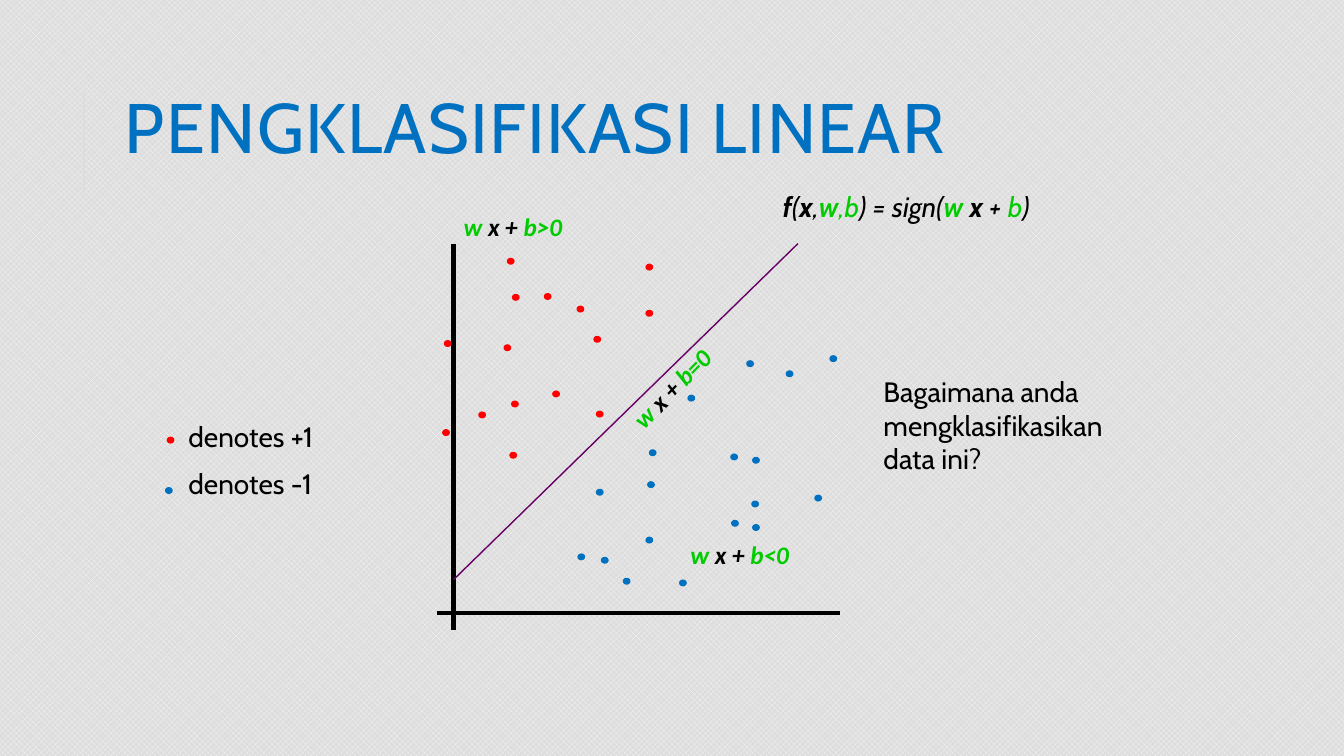
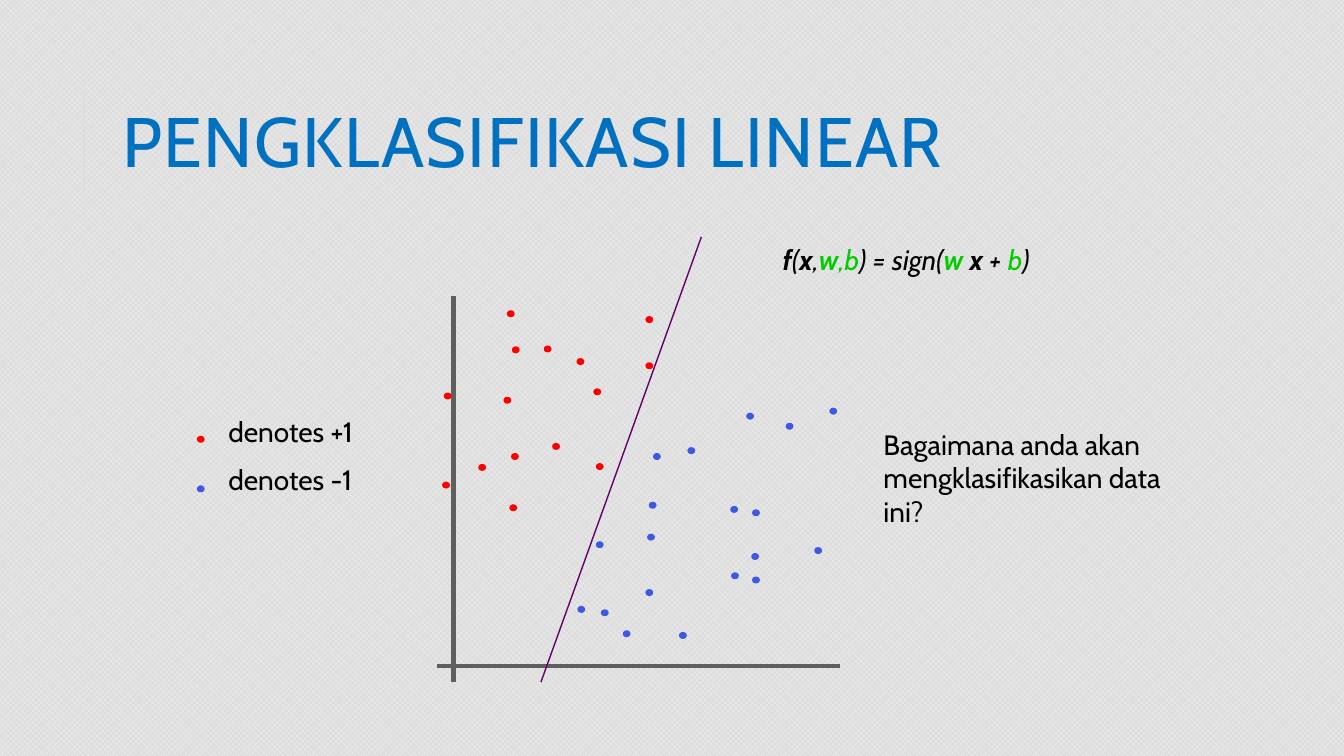
from dataclasses import dataclass

from lxml import etree
from pptx import Presentation
from pptx.dml.color import RGBColor
from pptx.enum.dml import MSO_PATTERN
from pptx.enum.shapes import MSO_CONNECTOR, MSO_SHAPE
from pptx.enum.text import MSO_ANCHOR, MSO_AUTO_SIZE
from pptx.oxml.ns import qn
from pptx.util import Inches, Pt

OVAL = MSO_SHAPE.OVAL
LINE = MSO_CONNECTOR.STRAIGHT
MIDDLE, TOP = MSO_ANCHOR.MIDDLE, MSO_ANCHOR.TOP
GROW, FIXED = MSO_AUTO_SIZE.SHAPE_TO_FIT_TEXT, MSO_AUTO_SIZE.NONE
WEAVE = MSO_PATTERN.SOLID_DIAMOND

# Grid: 160 columns by 90 rows, twelve cells to the inch
COLS, ROWS = 160, 90
BLACK, GREEN, RED, BLUE = "000000", "00CC00", "FF0000", "0070C0"
INDIGO, GREY, PURPLE = "3E59E1", "5F5F5F", "660066"
PALE, MIST = "F8F8F8", "DDDDDD"
BODY, MATH = "Cabin", "Calibri"
DOT = (0.8, 0.7)

Spot = tuple[float, float]
Area = tuple[float, float, float, float]


@dataclass
class Bit:
    text: str
    hue: str = BLACK
    bold: bool = False


@dataclass
class Style:
    size: float = 20
    face: str = BODY
    hue: str = BLACK
    italic: bool = False
    wrap: bool = True
    anchor: MSO_ANCHOR = TOP
    fit: MSO_AUTO_SIZE = GROW
    tight: float | None = None
    track: int = 0


@dataclass
class Label:
    area: Area
    sign: str
    turn: float = 0


@dataclass
class Scene:
    title: Spot
    drop: float
    axis: str
    minus: str
    legend: Spot
    keys: tuple[Spot, Spot]
    split: tuple[Spot, Spot]
    ask: str
    width: float
    extra: tuple[Spot, ...] = ()
    labels: tuple[Label, ...] = ()


PLAIN = Style()
HEAD = Style(50, hue=BLUE, anchor=MIDDLE, fit=FIXED, tight=0.8, track=100)
RULE = Style(italic=True)
NOTE = Style(18, MATH, italic=True, wrap=False, anchor=MIDDLE, fit=FIXED)

FORMULA = [
    Bit("f", bold=True), Bit("("), Bit("x", bold=True), Bit(","),
    Bit("w", GREEN, True), Bit(",b", GREEN), Bit(") = sign("),
    Bit("w ", GREEN, True), Bit("x", bold=True), Bit(" + "),
    Bit("b", GREEN), Bit(")"),
]

# Centres of the data points
PLUS = (
    (53.1, 51.5), (77.3, 37.3), (65.2, 35.3), (71.4, 49.3), (60.4, 41.4),
    (61.4, 35.4), (61.3, 48.1), (71.1, 40.4), (61.1, 54.2), (77.3, 31.8),
    (60.8, 31.1), (66.2, 46.9), (57.4, 49.4), (69.1, 36.8), (53.3, 40.9),
)
MINUS = (
    (69.2, 66.3), (87.4, 54.4), (71.4, 58.6), (99.2, 42.7), (89.9, 60),
    (82.3, 47.4), (97.4, 59.3), (74.6, 69.2), (90, 54.8), (77.7, 53.9),
    (94, 44.5), (89.3, 43.3), (87.5, 62.3), (81.3, 69.4), (77.3, 64.3),
    (77.5, 57.7), (72, 66.7), (90, 62.8),
)

SCENES = (
    Scene(
        title=(13.7, 6), drop=0, axis=BLACK, minus=BLUE,
        legend=(21.25, 49.3), keys=((20.3, 52.4), (20.1, 58.4)),
        split=((54, 69), (95, 29)),
        ask="Bagaimana anda mengklasifikasikan data ini?", width=32.3,
        labels=(
            Label((72.6, 44.5, 16.1, 2), "=", 314.4),
            Label((81, 64, 32, 4), "<"),
            Label((54, 25, 32, 4), ">"),
        ),
    ),
    Scene(
        title=(13.4, 7.7), drop=6.25, axis=GREY, minus=INDIGO,
        legend=(26, 48.8), keys=((23.9, 52.3), (23.9, 58.2)),
        split=((64.4, 81.2), (83.5, 28.2)),
        ask="Bagaimana anda akan mengklasifikasikan data ini?", width=35.4,
        extra=((78.2, 48.1),),
    ),
)


def cell(count: float) -> int:
    return Inches(count / 12)


def paint(color, hue: str) -> None:
    color.rgb = RGBColor.from_string(hue)


def stroke(slide, start: Spot, end: Spot, hue: str, width: float) -> None:
    line = slide.shapes.add_connector(LINE, *map(cell, start + end))
    paint(line.line.color, hue)
    line.line.width = Pt(width)
    etree.SubElement(line._element.spPr, qn("a:effectLst"))


def dot(slide, spot: Spot, hue: str) -> None:
    x, y = spot
    w, h = DOT
    area = (x - w / 2, y - h / 2, w, h)
    mark = slide.shapes.add_shape(OVAL, *map(cell, area))
    mark.shadow.inherit = False
    mark.fill.solid()
    paint(mark.fill.fore_color, hue)
    paint(mark.line.color, hue)
    mark.line.width = Pt(0.75)


def write(slide, area: Area, lines: list[list[Bit]], style: Style,
          turn: float = 0) -> None:
    box = slide.shapes.add_textbox(*map(cell, area))
    box.rotation = turn
    frame = box.text_frame
    frame.word_wrap = style.wrap
    frame.vertical_anchor = style.anchor
    frame.auto_size = style.fit
    for i, bits in enumerate(lines):
        para = frame.add_paragraph() if i else frame.paragraphs[0]
        if i:
            para.space_before = Pt(style.size / 2)
        if style.tight:
            para.line_spacing = style.tight
        font = para.font
        font.name, font.size = style.face, Pt(style.size)
        font.italic = style.italic
        paint(font.color, style.hue)
        for bit in bits:
            run = para.add_run()
            run.text = bit.text
            run.font.bold = bit.bold
            paint(run.font.color, bit.hue)
            if style.track:
                run.font._element.set("spc", str(style.track))


def plot(slide, scene: Scene) -> None:
    drop = scene.drop
    # Axes
    stroke(slide, (54, 29 + drop), (54, 75 + drop), scene.axis, 3)
    stroke(slide, (52, 73 + drop), (100, 73 + drop), scene.axis, 3)
    # Points of both classes
    for spots, hue in ((PLUS, RED), (MINUS + scene.extra, scene.minus)):
        for x, y in spots:
            dot(slide, (x, y + drop), hue)
    # Boundary and its labels
    stroke(slide, *scene.split, PURPLE, 1)
    for label in scene.labels:
        bits = [Bit("w ", GREEN, True), Bit("x + ", bold=True),
                Bit(f"b{label.sign}0", GREEN, True)]
        write(slide, label.area, [bits], NOTE, label.turn)


def build(deck, scene: Scene) -> None:
    slide = deck.slides.add_slide(deck.slide_layouts[6])
    # Side rule and title
    stroke(slide, (10, 22.8), (10, 10.8), MIST, 1.5)
    write(slide, (*scene.title, 127.5, 19.7),
          [[Bit("PENGKLASIFIKASI LINEAR", BLUE)]], HEAD)
    # Legend
    write(slide, (*scene.legend, 25, 11.2),
          [[Bit("denotes +1")], [Bit("denotes -1")]], PLAIN)
    for spot, hue in zip(scene.keys, (RED, scene.minus)):
        dot(slide, spot, hue)
    plot(slide, scene)
    # Formula and question
    write(slide, (92, 22 + scene.drop, 42, 5.2), [FORMULA], RULE)
    write(slide, (104, 44 + scene.drop, scene.width, 13.3),
          [[Bit(scene.ask)]], PLAIN)


def main() -> None:
    deck = Presentation()
    deck.slide_width, deck.slide_height = cell(COLS), cell(ROWS)
    # Shared background
    fill = deck.slide_master.background.fill
    fill.patterned()
    fill.pattern = WEAVE
    paint(fill.fore_color, PALE)
    paint(fill.back_color, MIST)
    for scene in SCENES:
        build(deck, scene)
    deck.save("out.pptx")


if __name__ == "__main__":
    main()
